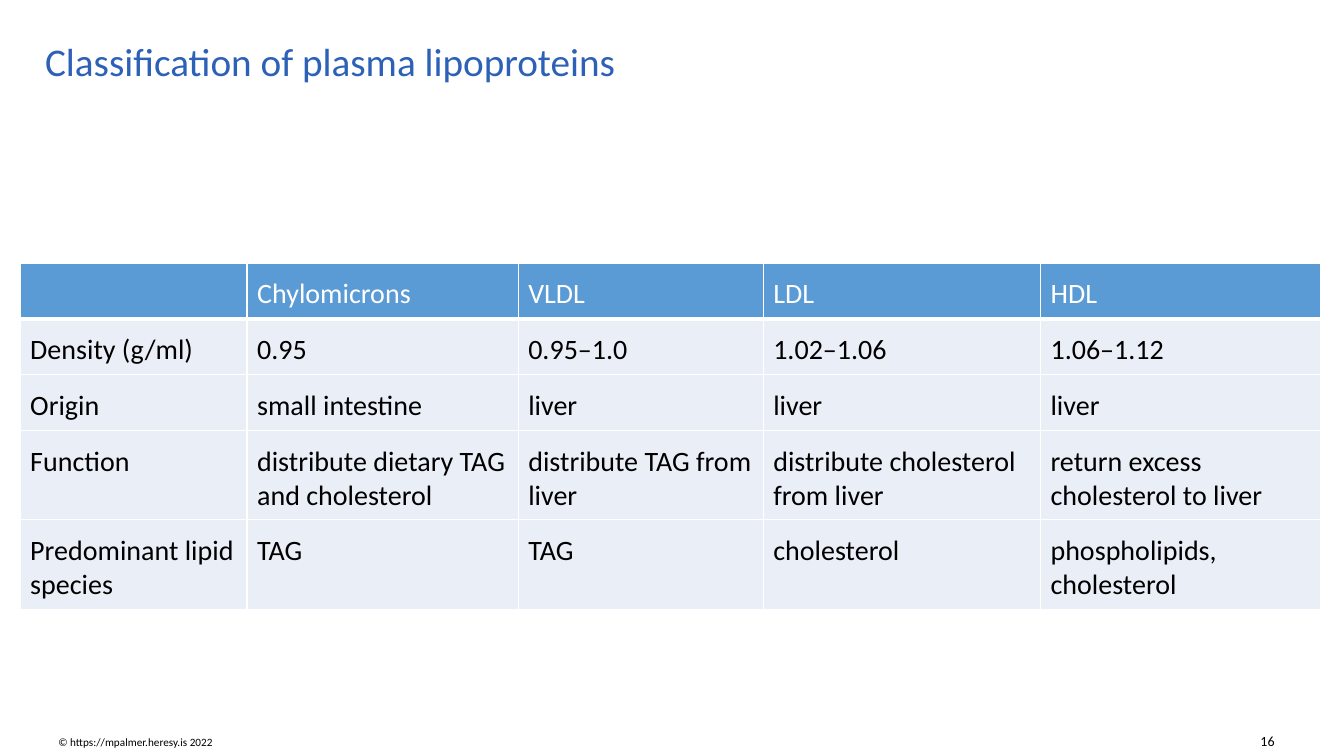
from lxml import etree
from pptx import Presentation
from pptx import util as u
from pptx.dml.color import RGBColor
from pptx.enum import text
from pptx.oxml.ns import qn

WIDTH, HEIGHT = 13.33, 7.5
FONT = "Calibri"
COLORS = {"title": "2D61B7", "header": "5B9BD5", "body": "EAEFF7",
          "ink": "000000", "white": "FFFFFF"}

TABLE_ROWS = [
    ["", "Chylomicrons", "VLDL", "LDL", "HDL"],
    ["Density (g/ml)", "0.95", "0.95–1.0", "1.02–1.06", "1.06–1.12"],
    ["Origin", "small intestine", "liver", "liver", "liver"],
    ["Function", "distribute dietary TAG and cholesterol",
     "distribute TAG from liver", "distribute cholesterol from liver",
     "return excess cholesterol to liver"],
    ["Predominant lipid species", "TAG", "TAG", "cholesterol",
     "phospholipids, cholesterol"],
]
COLUMN_WIDTHS = [2.25, 2.69, 2.43, 2.75, 2.78]
ROW_HEIGHT = 0.5


def write(frame, words, size, color="ink", align=text.PP_ALIGN.LEFT, spacing=1.0):
    """Fill a text frame with one formatted paragraph."""
    frame.word_wrap = True
    para = frame.paragraphs[0]
    para.alignment = align
    para.line_spacing = spacing
    span = para.add_run()
    span.text = words
    span.font.name = FONT
    span.font.size = u.Pt(size)
    span.font.color.rgb = RGBColor.from_string(COLORS[color])


def add_label(page, box, words, size, anchor=text.MSO_ANCHOR.BOTTOM, **style):
    label = page.shapes.add_textbox(*map(u.Inches, box))
    label.text_frame.vertical_anchor = anchor
    write(label.text_frame, words, size, **style)


def set_borders(cell, **points):
    """Draw white cell borders; keywords L, R, T and B give widths in points."""
    properties = cell._tc.get_or_add_tcPr()
    for side, width in points.items():
        line = etree.SubElement(properties, qn(f"a:ln{side}"), w=str(u.Pt(width)))
        fill = etree.SubElement(line, qn("a:solidFill"))
        etree.SubElement(fill, qn("a:srgbClr"), val=COLORS["white"])


def add_lipoprotein_table(page, box):
    frame = page.shapes.add_table(len(TABLE_ROWS), len(COLUMN_WIDTHS),
                                  *map(u.Inches, box))
    table = frame.table
    for column, width in zip(table.columns, COLUMN_WIDTHS):
        column.width = u.Inches(width)
    for index, (row, entries) in enumerate(zip(table.rows, TABLE_ROWS)):
        row.height = u.Inches(ROW_HEIGHT)
        header = index == 0
        for cell, words in zip(row.cells, entries):
            # Thick rule between the header and the body
            set_borders(cell, L=1, R=1, T=3 if index == 1 else 1, B=3 if header else 1)
            cell.fill.solid()
            cell.fill.fore_color.rgb = RGBColor.from_string(
                COLORS["header" if header else "body"])
            cell.margin_left = cell.margin_right = u.Inches(0.1)
            cell.margin_top, cell.margin_bottom = u.Inches(0.14), u.Inches(0.08)
            if words:
                write(cell.text_frame, words, 20, color="white" if header else "ink")


def add_footer(page, box):
    left, top, width, height = box
    add_label(page, (left, top, 3.14, height), "© https://mpalmer.heresy.is 2022", 8)
    add_label(page, (left + width - 0.7, top, 0.7, height), "16", 10,
              align=text.PP_ALIGN.RIGHT)


def build_slide(deck):
    page = deck.slides.add_slide(deck.slide_layouts[6])
    # Title
    add_label(page, (0.35, 0.24, 12.7, 0.78), "Classification of plasma lipoproteins",
              28, anchor=text.MSO_ANCHOR.MIDDLE, color="title", spacing=0.9)
    # Table
    add_lipoprotein_table(page, (0.2, 2.61, sum(COLUMN_WIDTHS),
                                 ROW_HEIGHT * len(TABLE_ROWS)))
    # Footer
    add_footer(page, (0.48, HEIGHT - 0.27, 12.26, 0.25))


def main():
    deck = Presentation()
    deck.slide_width, deck.slide_height = u.Inches(WIDTH), u.Inches(HEIGHT)
    build_slide(deck)
    deck.save("out.pptx")


if __name__ == "__main__":
    main()
